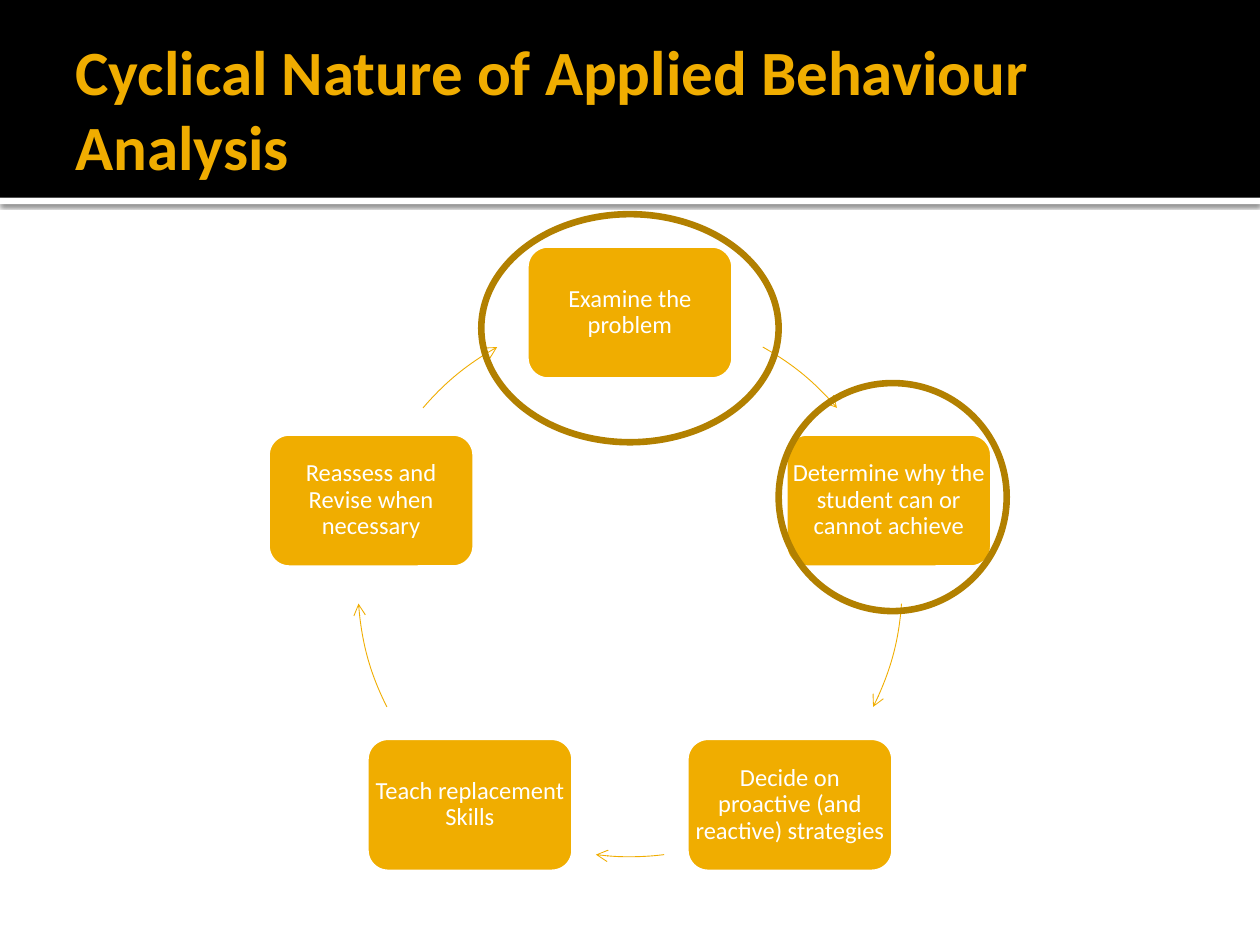
from math import cos, radians, sin

from lxml import etree
from pptx import Presentation
from pptx.dml.color import RGBColor
from pptx.enum import shapes as es, text as et
from pptx.oxml.ns import qn
from pptx.util import Inches, Pt

# Content
TITLE = "Cyclical Nature of Applied Behaviour Analysis"
STEPS = [
    "Examine the problem",
    "Determine why the student can or cannot achieve",
    "Decide on proactive (and reactive) strategies",
    "Teach replacement Skills",
    "Reassess and Revise when necessary",
]
# Start and end of each arrow, in degrees clockwise from the top
ARCS = [(29.2, 49.5), (94, 116.7), (172.8, 187.2), (243.3, 266), (310.5, 330.8)]
RINGS = [(3.82, 1.7, 2.36, 1.81), (6.18, 3.04, 1.81, 1.81)]
COLORS = {"gold": "F0AD00", "dark": "B28000", "black": "000000", "white": "FFFFFF"}
FONT = "Calibri"

# Cycle geometry in inches
MID_X, MID_Y, RADIUS = 5, 4.64, 2.16
BOX_W, BOX_H = 1.66, 1.08

KIND = es.MSO_SHAPE


def color(name):
    return RGBColor.from_string(COLORS[name])


def spot(deg):
    a = radians(deg)
    return MID_X + RADIUS * sin(a), MID_Y - RADIUS * cos(a)


def add(slide, kind, place, fill=None, line=None, width=0):
    shape = slide.shapes.add_shape(kind, *map(Inches, place))
    shape.shadow.inherit = False
    if fill:
        shape.fill.solid()
        shape.fill.fore_color.rgb = color(fill)
    else:
        shape.fill.background()
    if line:
        shape.line.color.rgb = color(line)
        shape.line.width = Pt(width)
    else:
        shape.line.fill.background()
    return shape


def write(shape, words, size, tint, insets, align, bold=False):
    frame = shape.text_frame
    frame.word_wrap = True
    frame.auto_size = et.MSO_AUTO_SIZE.NONE
    frame.vertical_anchor = et.MSO_ANCHOR.MIDDLE
    (frame.margin_left, frame.margin_top,
     frame.margin_right, frame.margin_bottom) = map(Inches, insets)
    para = frame.paragraphs[0]
    para.alignment = align
    run = para.add_run()
    run.text = words
    run.font.name, run.font.size, run.font.bold = FONT, Pt(size), bold
    run.font.color.rgb = color(tint)
    return para


def cast(shape):
    """Soft shadow straight below the shape."""
    effects = shape.element.spPr.find(qn("a:effectLst"))
    drop = etree.SubElement(effects, qn("a:outerShdw"), blurRad=str(Pt(2.5)),
                            dist=str(Pt(0.8)), dir="5400000", rotWithShape="0")
    tint = etree.SubElement(drop, qn("a:srgbClr"), val=COLORS["black"])
    etree.SubElement(tint, qn("a:alpha"), val="60000")


def arc(slide, ends):
    """Arrow along the circle through the step centres."""
    size = 2 * RADIUS
    shape = add(slide, KIND.ARC, (MID_X - RADIUS, MID_Y - RADIUS, size, size),
                line="gold", width=0.5)
    for i, deg in enumerate(ends):
        # Preset angles run clockwise from the right, in 60000ths of a degree
        shape.adjustments[i] = (deg - 90) % 360 * 0.6
    etree.SubElement(shape.element.spPr.find(qn("a:ln")), qn("a:tailEnd"),
                     type="arrow")


def main():
    deck = Presentation()
    deck.slide_width, deck.slide_height = Inches(10), Inches(7.5)
    slide = deck.slides.add_slide(deck.slide_layouts[5])

    # Header band
    cast(add(slide, KIND.RECTANGLE, (0, 1.57, 10, 0.05), fill="white"))
    add(slide, KIND.RECTANGLE, (0, 0, 10, 1.57), fill="black")

    # Title, raised above the band
    title = slide.shapes.title
    title.left, title.top, title.width, title.height = map(
        Inches, (0.5, 0.17, 9, 1.37))
    write(title, TITLE, 36, "gold", (0.1, 0.05, 0.05, 0.05),
          et.PP_ALIGN.LEFT, bold=True)
    title.element.getparent().append(title.element)

    # Cycle of steps and arrows
    for i, (step, ends) in enumerate(zip(STEPS, ARCS)):
        x, y = spot(i * 360 / len(STEPS))
        box = add(slide, KIND.ROUNDED_RECTANGLE,
                  (x - BOX_W / 2, y - BOX_H / 2, BOX_W, BOX_H),
                  fill="gold", line="white", width=3.78)
        para = write(box, step, 14, "white", (0.01,) * 4, et.PP_ALIGN.CENTER)
        para.line_spacing = 0.9
        arc(slide, ends)

    # Rings around the first two steps
    for place in RINGS:
        add(slide, KIND.OVAL, place, line="dark", width=3.78)

    deck.save("out.pptx")


if __name__ == "__main__":
    main()
